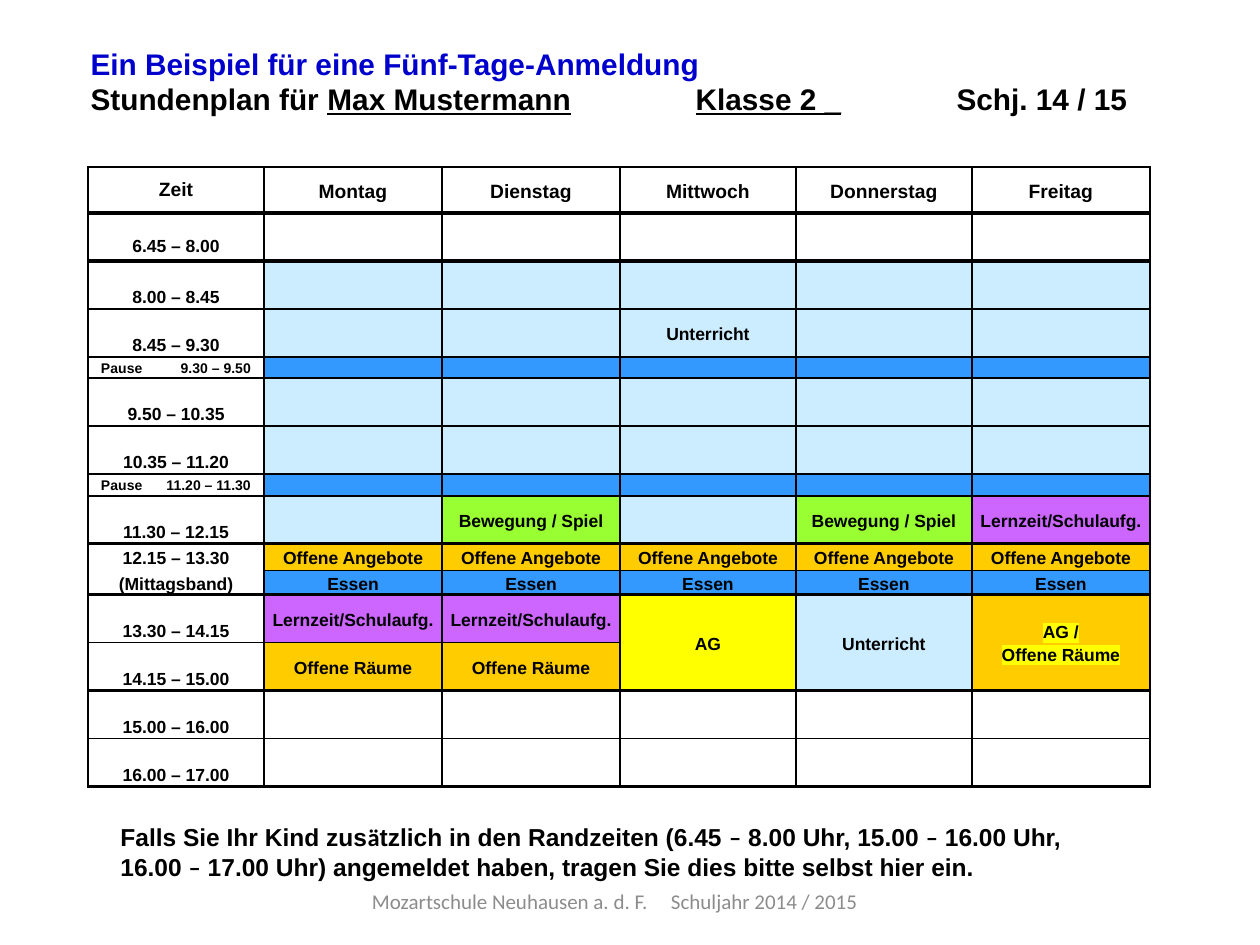
from lxml import etree
from pptx import Presentation
from pptx.dml.color import RGBColor
from pptx.enum.text import MSO_ANCHOR, MSO_AUTO_SIZE, PP_ALIGN
from pptx.oxml.ns import qn
from pptx.util import Pt

PX = 914400 // 126
MID, TOP = MSO_ANCHOR.MIDDLE, MSO_ANCHOR.TOP
LEFT, MITTE = PP_ALIGN.LEFT, PP_ALIGN.CENTER
rgb = RGBColor.from_string


def style(para, size, color="000000", bold=True, face="Arial", align=LEFT, tabs=()):
    """Format a paragraph; tabs are (px, alignment) pairs."""
    para.alignment = align
    font = para.font
    font.size, font.bold, font.name = Pt(size), bold, face
    font.color.rgb = rgb(color)
    if tabs:
        stops = etree.Element(qn("a:tabLst"))
        for pos, kind in tabs:
            etree.SubElement(stops, qn("a:tab"), pos=str(pos * PX), algn=kind)
        para._p.pPr.find(qn("a:defRPr")).addprevious(stops)


def edge(cell, side, width):
    """Draw one cell border, or none where the width is 0."""
    line = etree.SubElement(cell._tc.get_or_add_tcPr(), qn("a:ln" + side),
                            w=str(Pt(width)))
    if width:
        fill = etree.SubElement(line, qn("a:solidFill"))
        etree.SubElement(fill, qn("a:srgbClr"), val="000000")
    else:
        etree.SubElement(line, qn("a:noFill"))


deck = Presentation()
deck.slide_width, deck.slide_height = 1260 * PX, 945 * PX
slide = deck.slides.add_slide(deck.slide_layouts[5])

# Timetable: what each code in the plan stands for
KINDS = {
    "-": ("", None),
    "u": ("", "CCECFF"),
    "U": ("Unterricht", "CCECFF"),
    "p": ("", "3399FF"),
    "B": ("Bewegung / Spiel", "99FF33"),
    "L": ("Lernzeit/Schulaufg.", "CC66FF"),
    "O": ("Offene Angebote", "FFCC00"),
    "E": ("Essen", "3399FF"),
    "R": ("Offene Räume", "FFCC00"),
    "A": ("AG", "FFFF00"),
    "M": ("AG /\nOffene Räume", "FFCC00"),
}
DAYS = ["Montag", "Dienstag", "Mittwoch", "Donnerstag", "Freitag"]
PLAN = [
    ("Zeit", 46, "-----"),
    ("6.45 – 8.00", 48, "-----"),
    ("8.00 – 8.45", 48, "uuuuu"),
    ("8.45 – 9.30", 48, "uuUuu"),
    ("Pause\t9.30 – 9.50", 21, "ppppp"),
    ("9.50 – 10.35", 48, "uuuuu"),
    ("10.35 – 11.20", 48, "uuuuu"),
    ("Pause\t11.20 – 11.30", 22, "ppppp"),
    ("11.30 – 12.15", 48, "uBuBL"),
    ("12.15 – 13.30", 27, "OOOOO"),
    ("(Mittagsband)", 24, "EEEEE"),
    ("13.30 – 14.15", 48, "LLAUM"),
    ("14.15 – 15.00", 48, "RR---"),
    ("15.00 – 16.00", 48, "-----"),
    ("16.00 – 17.00", 48, "-----"),
]
WIDTHS = [176, 178, 178, 176, 176, 178]
HEAVY = {0, 1, 8, 10, 12, 14}  # rows with a thick line below
HIGH = sum(row[1] for row in PLAN)

frame = slide.shapes.add_table(len(PLAN), len(WIDTHS), 88 * PX, 167 * PX,
                               sum(WIDTHS) * PX, HIGH * PX)
table = frame.table
table.first_row = table.horz_banding = False
for col, width in zip(table.columns, WIDTHS):
    col.width = width * PX

for r, (time, high, codes) in enumerate(PLAN):
    table.rows[r].height = high * PX
    for c in range(len(WIDTHS)):
        cell = table.cell(r, c)
        text, fill = (time, None) if c == 0 else KINDS[codes[c - 1]]
        if r == 0 and c:
            text = DAYS[c - 1]
        pause = text.startswith("Pause")
        cell.vertical_anchor = MID
        cell.margin_left = (13 if pause else 6) * PX
        cell.margin_right = 6 * PX
        cell.margin_top = cell.margin_bottom = 0
        if r == 0 and c == 0:
            cell.margin_bottom = 4 * PX
        elif c == 0 and high == 48:
            cell.margin_top = (16 if r == 1 else 22) * PX
        cell.text = text
        size = 8 if pause or not text else 11 if r == 0 else 10
        for para in cell.text_frame.paragraphs:
            para.line_spacing = 1.15
            style(para, size, align=LEFT if pause else MITTE,
                  tabs=[(150, "r")] if pause else ())
            if text == KINDS["M"][0]:
                mark = etree.SubElement(para.runs[0]._r.get_or_add_rPr(),
                                        qn("a:highlight"))
                etree.SubElement(mark, qn("a:srgbClr"), val="FFFF00")
        noon = c == 0 and time in ("12.15 – 13.30", "(Mittagsband)")
        above = 2.25 if r - 1 in HEAVY else 1
        below = 2.25 if r in HEAVY else 1
        edge(cell, "L", 1)
        edge(cell, "R", 1)
        edge(cell, "T", 0 if noon and r == 10 else above)
        edge(cell, "B", 0 if noon and r == 9 else below)
        if fill:
            cell.fill.solid()
            cell.fill.fore_color.rgb = rgb(fill)
        else:
            cell.fill.background()

for c in (3, 4, 5):
    table.cell(11, c).merge(table.cell(12, c))

# Heading
title = slide.shapes.title
title.left, title.top, title.width, title.height = (v * PX for v in (78, 39, 1074, 84))
body = title.text_frame
body.auto_size, body.vertical_anchor = MSO_AUTO_SIZE.NONE, MID
body.text = "Ein Beispiel für eine Fünf-Tage-Anmeldung"
style(body.paragraphs[0], 17, "0000CC")
para = body.add_paragraph()
style(para, 17, tabs=[(605, "l"), (767, "l"), (866, "l")])
for text, line in [("Stundenplan für ", False), ("Max Mustermann", True), ("\t", False),
                   ("Klasse 2 _\t", True), ("\tSchj. 14 / 15", False)]:
    run = para.add_run()
    run.text, run.font.underline = text, line

# Note below the table; every second piece is set in Calibri
NOTE = [
    ["Falls Sie Ihr Kind zus", "ä", "tzlich in den Randzeiten (6.45 ", "–",
     " 8.00 Uhr, 15.00 ", "–", " 16.00 Uhr,"],
    ["16.00 ", "–",
     " 17.00 Uhr) angemeldet haben, tragen Sie dies bitte selbst hier ein."],
]
note = slide.shapes.add_textbox(108 * PX, 816 * PX, 1103 * PX, 111 * PX).text_frame
note.word_wrap = True
note.vertical_anchor = TOP
for i, parts in enumerate(NOTE):
    para = note.add_paragraph() if i else note.paragraphs[0]
    style(para, 14)
    for k, text in enumerate(parts):
        run = para.add_run()
        run.text, run.font.name = text, ("Arial", "Calibri")[k % 2]

# Footer
foot = slide.shapes.add_textbox(227 * PX, 876 * PX, 777 * PX, 50 * PX).text_frame
foot.word_wrap, foot.vertical_anchor = True, MID
foot.margin_left = 145 * PX
foot.text = "Mozartschule Neuhausen a. d. F.\tSchuljahr 2014 / 2015"
style(foot.paragraphs[0], 12, "8C8C8C", False, "Calibri", tabs=[(299, "l")])

deck.save("out.pptx")
